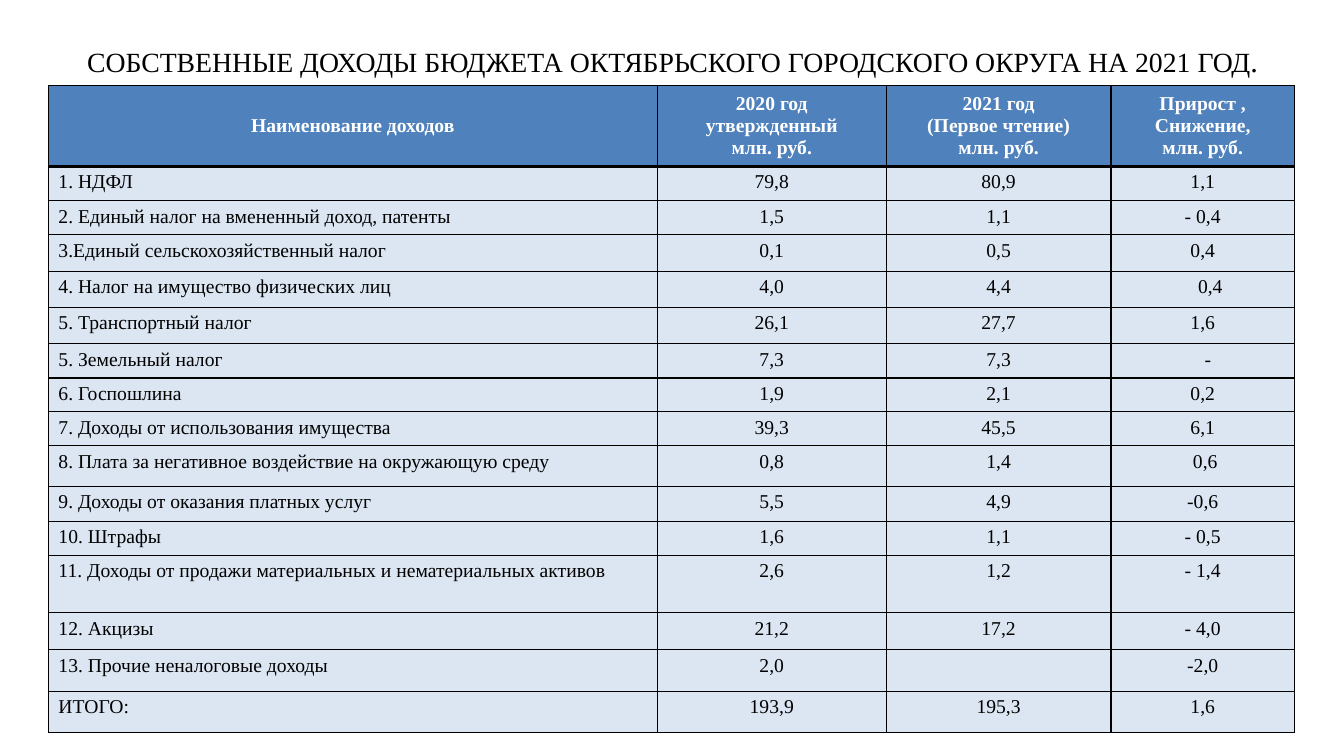
from dataclasses import dataclass

from lxml.etree import SubElement
from pptx import Presentation
from pptx.dml.color import RGBColor
from pptx.enum.text import MSO_ANCHOR, PP_ALIGN
from pptx.oxml.ns import qn
from pptx.util import Inches, Pt


@dataclass(frozen=True)
class Theme:
    font: str = "Times New Roman"
    title_size: float = 19.8
    title_stop_size: float = 21.6
    table_size: float = 14
    text: str = "000000"
    header_text: str = "FFFFFF"
    header_fill: str = "4F81BD"
    body_fill: str = "DCE6F2"
    border: str = "000000"
    border_width: float = 1
    header_rule_width: float = 3


COLUMN_WIDTHS = [6.04, 2.27, 2.23, 1.82]
ROW_HEIGHTS = [0.74, 0.34, 0.34, 0.36, 0.36, 0.36, 0.34, 0.3,
               0.34, 0.4, 0.35, 0.32, 0.57, 0.37, 0.41, 0.41]
HEADER = [
    "Наименование доходов",
    "2020 год утвержденный\nмлн. руб.",
    "2021 год\n(Первое чтение)\nмлн. руб.",
    "Прирост ,\nСнижение,\nмлн. руб.",
]
INCOME = [
    ["1. НДФЛ", "79,8", "80,9", "1,1"],
    ["2. Единый налог на вмененный доход, патенты", "1,5", "1,1", "- 0,4"],
    ["3.Единый сельскохозяйственный налог", "0,1", "0,5", "0,4"],
    ["4. Налог на имущество физических лиц", "4,0", "4,4", "0,4"],
    ["5. Транспортный налог", "26,1", "27,7", "1,6"],
    ["5. Земельный налог", "7,3", "7,3", "-"],
    ["6. Госпошлина", "1,9", "2,1", "0,2"],
    ["7. Доходы от использования имущества", "39,3", "45,5", "6,1"],
    ["8. Плата за негативное воздействие на окружающую среду", "0,8", "1,4", "0,6"],
    ["9. Доходы от оказания платных услуг", "5,5", "4,9", "-0,6"],
    ["10. Штрафы", "1,6", "1,1", "- 0,5"],
    ["11. Доходы от продажи материальных и нематериальных активов",
     "2,6", "1,2", "- 1,4"],
    ["12. Акцизы", "21,2", "17,2", "- 4,0"],
    ["13. Прочие неналоговые доходы", "2,0", "", "-2,0"],
    ["ИТОГО:", "193,9", "195,3", "1,6"],
]
# Extra left inset of single cells, by (row, column)
INDENTS = {(4, 3): 0.15, (6, 3): 0.1, (9, 3): 0.05}


class SlideBuilder:
    def __init__(self, slide, theme):
        self.slide = slide
        self.theme = theme

    def style_font(self, font, size, color, bold=False):
        font.name = self.theme.font
        font.size = Pt(size)
        font.bold = bold
        font.color.rgb = RGBColor.from_string(color)

    def add_title(self, text, stop, left, top, width, height):
        """Add a centred title whose closing mark is slightly larger."""
        box = self.slide.shapes.add_textbox(
            Inches(left), Inches(top), Inches(width), Inches(height))
        frame = box.text_frame
        frame.word_wrap = True
        frame.vertical_anchor = MSO_ANCHOR.MIDDLE
        paragraph = frame.paragraphs[0]
        paragraph.alignment = PP_ALIGN.CENTER
        for words, size in ((text, self.theme.title_size),
                            (stop, self.theme.title_stop_size)):
            run = paragraph.add_run()
            run.text = words
            self.style_font(run.font, size, self.theme.text)

    def add_table(self, rows, left, top):
        table = self.slide.shapes.add_table(
            len(rows), len(COLUMN_WIDTHS), Inches(left), Inches(top),
            Inches(sum(COLUMN_WIDTHS)), Inches(sum(ROW_HEIGHTS))).table
        table.horz_banding = False
        for column, width in zip(table.columns, COLUMN_WIDTHS):
            column.width = Inches(width)
        for row, height in zip(table.rows, ROW_HEIGHTS):
            row.height = Inches(height)
        for row_index, values in enumerate(rows):
            for column_index, value in enumerate(values):
                self.fill_cell(table, row_index, column_index, value)

    def fill_cell(self, table, row, column, value):
        theme = self.theme
        is_header = row == 0
        cell = table.cell(row, column)
        cell.text = value
        cell.margin_left = Inches(0.1 + INDENTS.get((row, column), 0))
        if is_header:
            cell.vertical_anchor = MSO_ANCHOR.MIDDLE
        for paragraph in cell.text_frame.paragraphs:
            centred = is_header or column > 0
            paragraph.alignment = PP_ALIGN.CENTER if centred else PP_ALIGN.LEFT
            self.style_font(paragraph.font, theme.table_size,
                            theme.header_text if is_header else theme.text,
                            is_header)
        self.add_borders(cell, row)
        cell.fill.solid()
        cell.fill.fore_color.rgb = RGBColor.from_string(
            theme.header_fill if is_header else theme.body_fill)

    def add_borders(self, cell, row):
        """Draw thin sides, with a thick rule between header and body."""
        properties = cell._tc.get_or_add_tcPr()
        thick_side = {0: "B", 1: "T"}.get(row)
        for side in "LRTB":
            width = (self.theme.header_rule_width if side == thick_side
                     else self.theme.border_width)
            line = SubElement(properties, qn(f"a:ln{side}"), w=str(Pt(width)))
            fill = SubElement(line, qn("a:solidFill"))
            SubElement(fill, qn("a:srgbClr"), val=self.theme.border)


def main():
    presentation = Presentation()
    presentation.slide_width = Inches(13.33)
    presentation.slide_height = Inches(7.5)
    slide = presentation.slides.add_slide(presentation.slide_layouts[6])
    builder = SlideBuilder(slide, Theme())
    builder.add_title(
        "СОБСТВЕННЫЕ ДОХОДЫ БЮДЖЕТА ОКТЯБРЬСКОГО ГОРОДСКОГО ОКРУГА НА 2021 ГОД",
        ".", 0.67, 0.3, 12, 0.59)
    builder.add_table([HEADER, *INCOME], 0.48, 0.85)
    presentation.save("out.pptx")


if __name__ == "__main__":
    main()
